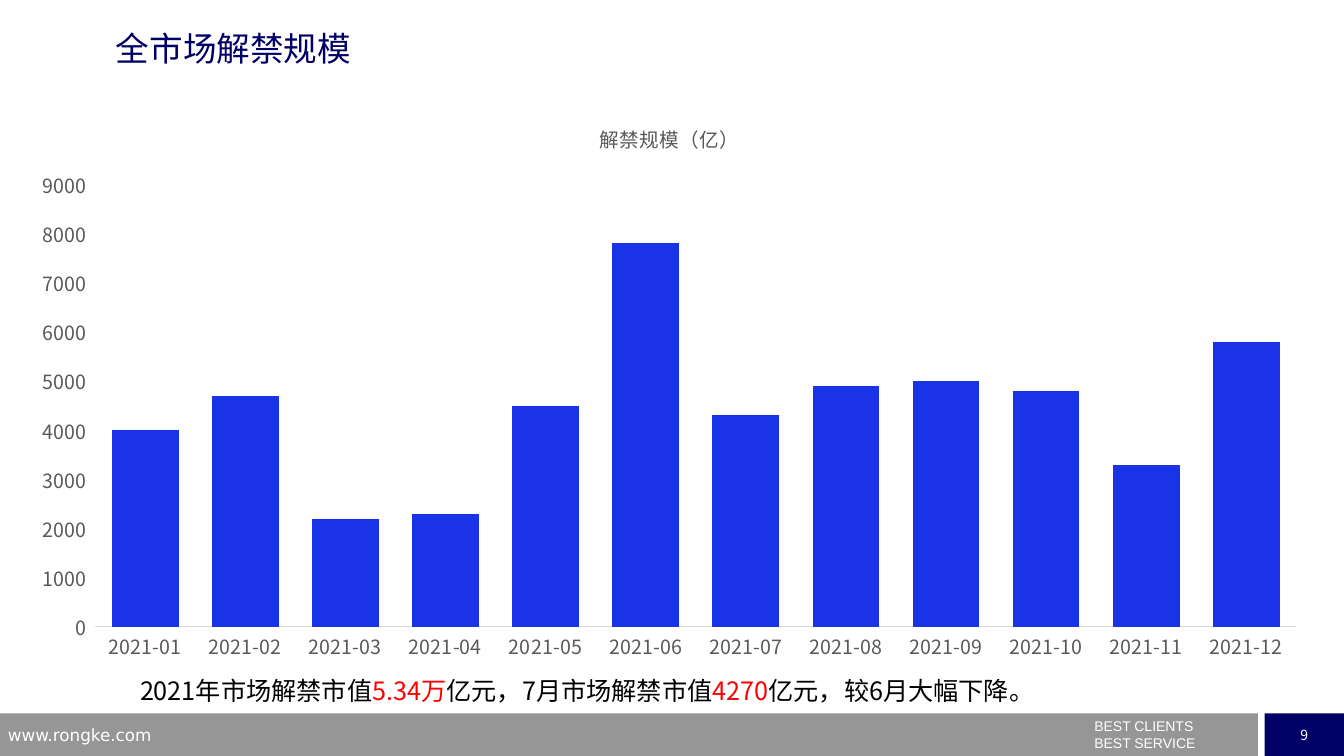
from lxml import etree
from pptx import Presentation
from pptx.chart.data import CategoryChartData
from pptx.dml.color import RGBColor
from pptx.enum.chart import XL_CHART_TYPE as ChartType, XL_TICK_MARK as TickMark
from pptx.enum.shapes import MSO_SHAPE as Shape
from pptx.enum.text import MSO_ANCHOR as Anchor, PP_ALIGN as Align
from pptx.oxml.ns import qn
from pptx.util import Cm, Pt

COLORS = {
    "navy": "000066", "gray": "969696", "white": "FFFFFF", "black": "000000",
    "red": "FF0000", "bar": "1B33E7", "label": "595959", "axis": "D9D9D9",
}
CJK_FONT = "Noto Sans CJK SC"


def rgb(name):
    return RGBColor.from_string(COLORS[name])


def style_run(run, size, color, face=CJK_FONT):
    """Set the run's look, using the same face for Latin and East Asian text."""
    run.font.size = Pt(size)
    run.font.color.rgb = rgb(color)
    run.font.name = face
    etree.SubElement(run._r.get_or_add_rPr(), qn("a:ea")).set("typeface", face)


prs = Presentation()
prs.slide_width, prs.slide_height = Cm(33.87), Cm(19.05)
slide = prs.slides.add_slide(prs.slide_layouts[6])
shapes = slide.shapes

# Footer
footer_top, footer_height = Cm(17.98), Cm(1.07)
bars = []
for left, width, color in [(0, 31.7, "gray"), (31.87, 2, "navy")]:
    bar = shapes.add_shape(Shape.RECTANGLE, Cm(left), footer_top, Cm(width), footer_height)
    bar.shadow.inherit = False
    bar.fill.solid()
    bar.fill.fore_color.rgb = rgb(color)
    bar.line.fill.background()
    bars.append(bar)

page_number = bars[1].text_frame
page_number.text = "9"
page_number.word_wrap = False
page_number.vertical_anchor = Anchor.MIDDLE
page_number.paragraphs[0].alignment = Align.CENTER
style_run(page_number.paragraphs[0].runs[0], 10, "white")

slogan = shapes.add_textbox(Cm(27.33), Cm(18.14), Cm(6.5), Cm(0.91)).text_frame
slogan.word_wrap = True
slogan.text = "BEST CLIENTS\nBEST SERVICE"
for line in slogan.paragraphs:
    line.line_spacing = 0.5
    style_run(line.runs[0], 10, "white", "Arial")
slogan.paragraphs[1].space_before = Pt(5.75)

website = shapes.add_textbox(Cm(-0.05), Cm(18.14), Cm(8.13), Cm(0.66)).text_frame
website.word_wrap = True
website.text = "www.rongke.com"
style_run(website.paragraphs[0].runs[0], 12, "white", "DejaVu Sans")

# Heading
heading = shapes.add_textbox(Cm(2.92), Cm(0.71), Cm(22.86), Cm(1.17)).text_frame
heading.word_wrap = True
heading.margin_left = heading.margin_right = heading.margin_top = heading.margin_bottom = 0
heading.text = "全市场解禁规模"
style_run(heading.paragraphs[0].runs[0], 24, "navy")

# Conclusion under the chart
conclusion = shapes.add_textbox(Cm(3.28), Cm(16.89), Cm(29.54), Cm(1.02)).text_frame
conclusion.word_wrap = True
for wording, color in [
    ("2021年市场解禁市值", "black"),
    ("5.34万", "red"),
    ("亿元，7月市场解禁市值", "black"),
    ("4270", "red"),
    ("亿元，较6月大幅下降。", "black"),
]:
    run = conclusion.paragraphs[0].add_run()
    run.text = wording
    style_run(run, 18, color)

# Monthly chart
unlock_title = "解禁规模（亿）"
unlock_data = CategoryChartData(number_format="0_ ")
unlock_data.categories = [f"2021-{month:02}" for month in range(1, 13)]
unlock_data.add_series(unlock_title, [4000, 4700, 2200, 2300, 4500, 7800,
                                      4300, 4900, 5000, 4800, 3300, 5800])
chart = shapes.add_chart(ChartType.COLUMN_CLUSTERED, Cm(0.41), Cm(2.57),
                         Cm(32.92), Cm(14.33), unlock_data).chart
chart.font.name = CJK_FONT
chart.font.size = Pt(10)
chart.has_legend = False
chart.has_title = True
chart.chart_title.include_in_layout = False
chart_title = chart.chart_title.text_frame
chart_title.text = unlock_title
chart_title.paragraphs[0].font.bold = False
style_run(chart_title.paragraphs[0].runs[0], 14, "label")

plot = chart.plots[0]
plot.gap_width, plot.overlap = 50, 100
plot.vary_by_categories = False
columns = plot.series[0].format.fill
columns.solid()
columns.fore_color.rgb = rgb("bar")

months, amounts = chart.category_axis, chart.value_axis
for axis in (months, amounts):
    axis.has_major_gridlines = False
    axis.major_tick_mark = axis.minor_tick_mark = TickMark.NONE
    axis.tick_labels.font.size = Pt(14)
    axis.tick_labels.font.name = CJK_FONT
    axis.tick_labels.font.color.rgb = rgb("label")
months.format.line.color.rgb = rgb("axis")
months.format.line.width = Pt(0.75)
amounts.format.line.fill.background()
amounts.minimum_scale, amounts.maximum_scale, amounts.major_unit = 0, 9000, 1000
amounts.tick_labels.number_format = "0_ "
amounts.tick_labels.number_format_is_linked = False

prs.save("out.pptx")
